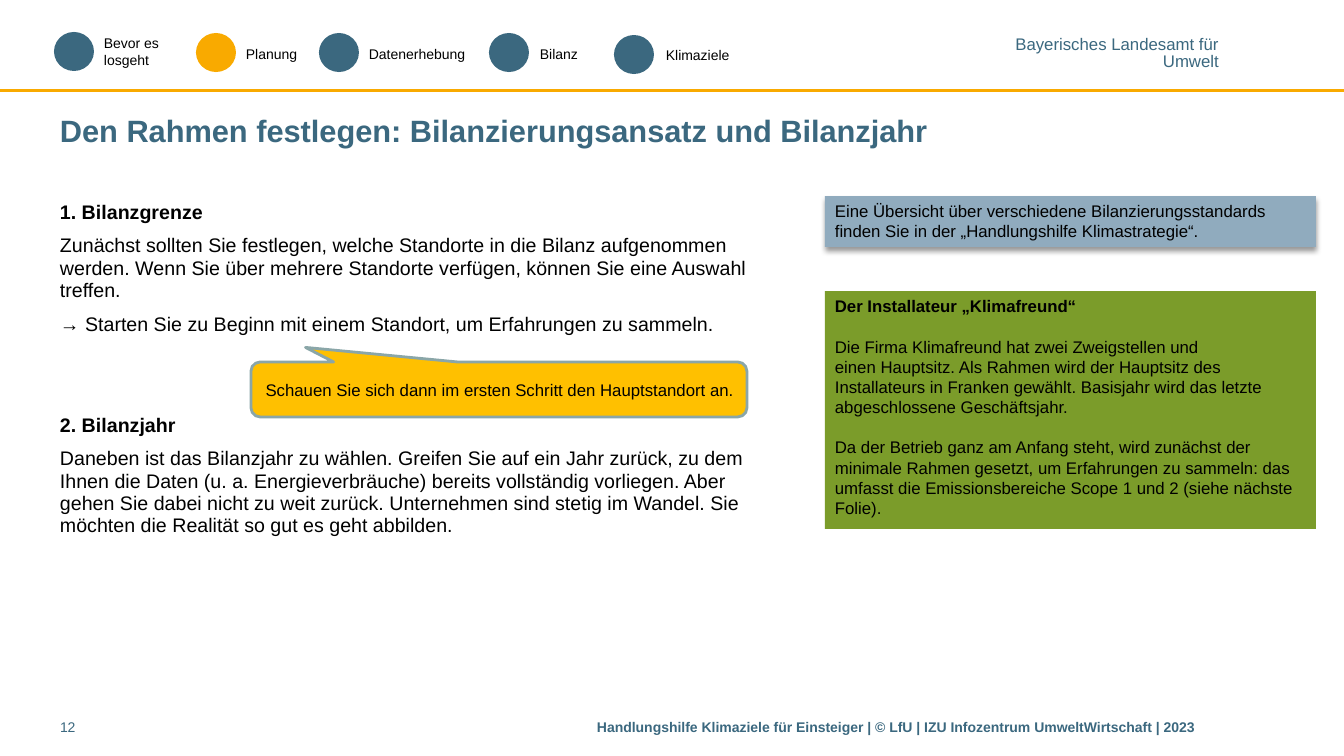
from lxml import etree
from pptx import Presentation
from pptx.dml.color import RGBColor
from pptx.enum.shapes import MSO_CONNECTOR, MSO_SHAPE
from pptx.enum.text import MSO_ANCHOR, PP_ALIGN
from pptx.oxml.ns import qn
from pptx.util import Emu, Pt

TEAL = RGBColor(0x3B, 0x68, 0x7F)
ORANGE = RGBColor(0xF9, 0xAA, 0x00)
AMBER = RGBColor(0xFF, 0xC0, 0x00)
GREY = RGBColor(0x8A, 0xA6, 0xA8)
BLUE = RGBColor(0x90, 0xAB, 0xBE)
GREEN = RGBColor(0x7B, 0x9C, 0x2A)
BLACK = RGBColor(0, 0, 0)
LEFT, RIGHT = PP_ALIGN.LEFT, PP_ALIGN.RIGHT
TOP, MIDDLE = MSO_ANCHOR.TOP, MSO_ANCHOR.MIDDLE
OVAL, RECT = MSO_SHAPE.OVAL, MSO_SHAPE.RECTANGLE
BUBBLE = MSO_SHAPE.ROUNDED_RECTANGULAR_CALLOUT
STRAIGHT = MSO_CONNECTOR.STRAIGHT
SCALE = 914400 / 100.8

prs = Presentation()
prs.slide_width, prs.slide_height = Emu(round(1344 * SCALE)), Emu(round(756 * SCALE))
slide = prs.slides.add_slide(prs.slide_layouts[6])
shapes = slide.shapes


def add_box(x, y, w, h, kind=None, fill=None):
    area = [Emu(round(n * SCALE)) for n in (x, y, w, h)]
    if kind is None:
        return shapes.add_textbox(*area)
    box = shapes.add_shape(kind, *area)
    box.shadow.inherit = False
    box.fill.solid()
    box.fill.fore_color.rgb = fill
    box.line.fill.background()
    return box


def write(box, text, size, color=BLACK, bold=(), align=LEFT, anchor=TOP, flush=False):
    frame = box.text_frame
    frame.text = text
    frame.word_wrap = True
    frame.vertical_anchor = anchor
    if flush:
        frame.margin_left = frame.margin_right = 0
    for i, para in enumerate(frame.paragraphs):
        para.alignment = align
        for run in para.runs:
            run.font.name = "Arial"
            run.font.size = Pt(size)
            run.font.bold = i in bold
            run.font.color.rgb = color
    return frame


# Header rule and sender
rule = shapes.add_connector(STRAIGHT, 0, Emu(round(90.5 * SCALE)),
                            prs.slide_width, Emu(round(90.5 * SCALE)))
rule.line.color.rgb = ORANGE
rule.line.width = Pt(2)
etree.SubElement(rule._element.spPr, qn("a:effectLst"))

sender = write(add_box(1015, 37, 204, 34), "Bayerisches Landesamt für\nUmwelt",
               12, TEAL, align=RIGHT, flush=True)
sender.margin_top = sender.margin_bottom = 0
sender.word_wrap = False
for para in sender.paragraphs:
    para.line_spacing = 0.85

# Steps: dot x, dot y, label x, label y, label width, label
STEPS = [
    (54, 32, 94, 30, 83, "Bevor es\nlosgeht"),
    (196, 33, 236, 41, 150, "Planung"),
    (319, 33, 359, 41, 150, "Datenerhebung"),
    (489, 33, 530, 41, 150, "Bilanz"),
    (614, 35, 656, 42, 150, "Klimaziele"),
]
for x, y, left, top, width, label in STEPS:
    add_box(x, y, 40, 39, OVAL, ORANGE if label == "Planung" else TEAL)
    write(add_box(left, top, width, 27), label, 10)

# Title and footer
write(add_box(60, 103, 1016, 55), "Den Rahmen festlegen: Bilanzierungsansatz und Bilanzjahr",
      22, TEAL, bold=[0], anchor=MIDDLE, flush=True)
write(add_box(597, 714, 705, 31),
      "Handlungshilfe Klimaziele für Einsteiger | © LfU | "
      "IZU Infozentrum UmweltWirtschaft | 2023", 10, TEAL, bold=[0], flush=True)
write(add_box(60, 714, 71, 31), "12", 10, TEAL, flush=True)

# Main text
BODY = [
    "1. Bilanzgrenze",
    "Zunächst sollten Sie festlegen, welche Standorte in die Bilanz aufgenommen werden. "
    "Wenn Sie über mehrere Standorte verfügen, können Sie eine Auswahl treffen.",
    "→ Starten Sie zu Beginn mit einem Standort, um Erfahrungen zu sammeln.",
    "2. Bilanzjahr",
    "Daneben ist das Bilanzjahr zu wählen. Greifen Sie auf ein Jahr zurück, zu dem Ihnen "
    "die Daten (u. a. Energieverbräuche) bereits vollständig vorliegen. Aber gehen Sie "
    "dabei nicht zu weit zurück. Unternehmen sind stetig im Wandel. Sie möchten die "
    "Realität so gut es geht abbilden.",
]
body = write(add_box(60, 196, 723, 388), "\n".join(BODY), 14, bold=[0, 3], flush=True)
for para, gap in zip(body.paragraphs, (0, 8, 8, 56, 8)):
    para.line_spacing = Pt(16)
    para.space_before = Pt(gap)

# Hint with soft shadow
hint = add_box(825, 196, 491, 51, RECT, BLUE)
write(hint, "Eine Übersicht über verschiedene Bilanzierungsstandards finden Sie in der "
      "„Handlungshilfe Klimastrategie“.", 12)
glow = etree.SubElement(hint._element.spPr.find(qn("a:effectLst")), qn("a:outerShdw"),
                        blurRad=str(Pt(4)), dist=str(Pt(3)), dir="5400000", rotWithShape="0")
tint = etree.SubElement(glow, qn("a:srgbClr"), val="000000")
etree.SubElement(tint, qn("a:alpha"), val="40000")

# Callout
bubble = add_box(251, 362, 496, 55, BUBBLE, AMBER)
for i, value in enumerate((-0.39, -0.765, 0.167)):
    bubble.adjustments[i] = value
bubble.line.color.rgb = GREY
bubble.line.width = Pt(2)
write(bubble, "Schauen Sie sich dann im ersten Schritt den Hauptstandort an.",
      12, align=RIGHT, anchor=MIDDLE)

# Example
CASE = [
    "Der Installateur „Klimafreund“",
    "Die Firma Klimafreund hat zwei Zweigstellen und",
    "einen Hauptsitz. Als Rahmen wird der Hauptsitz des Installateurs in Franken gewählt. "
    "Basisjahr wird das letzte abgeschlossene Geschäftsjahr.",
    "Da der Betrieb ganz am Anfang steht, wird zunächst der minimale Rahmen gesetzt, um "
    "Erfahrungen zu sammeln: das umfasst die Emissionsbereiche Scope 1 und 2 "
    "(siehe nächste Folie).",
]
case = write(add_box(825, 291, 491, 238, RECT, GREEN), "\n".join(CASE), 12, bold=[0])
for i in (1, 3):
    case.paragraphs[i].space_before = Pt(14.4)

prs.save("out.pptx")
